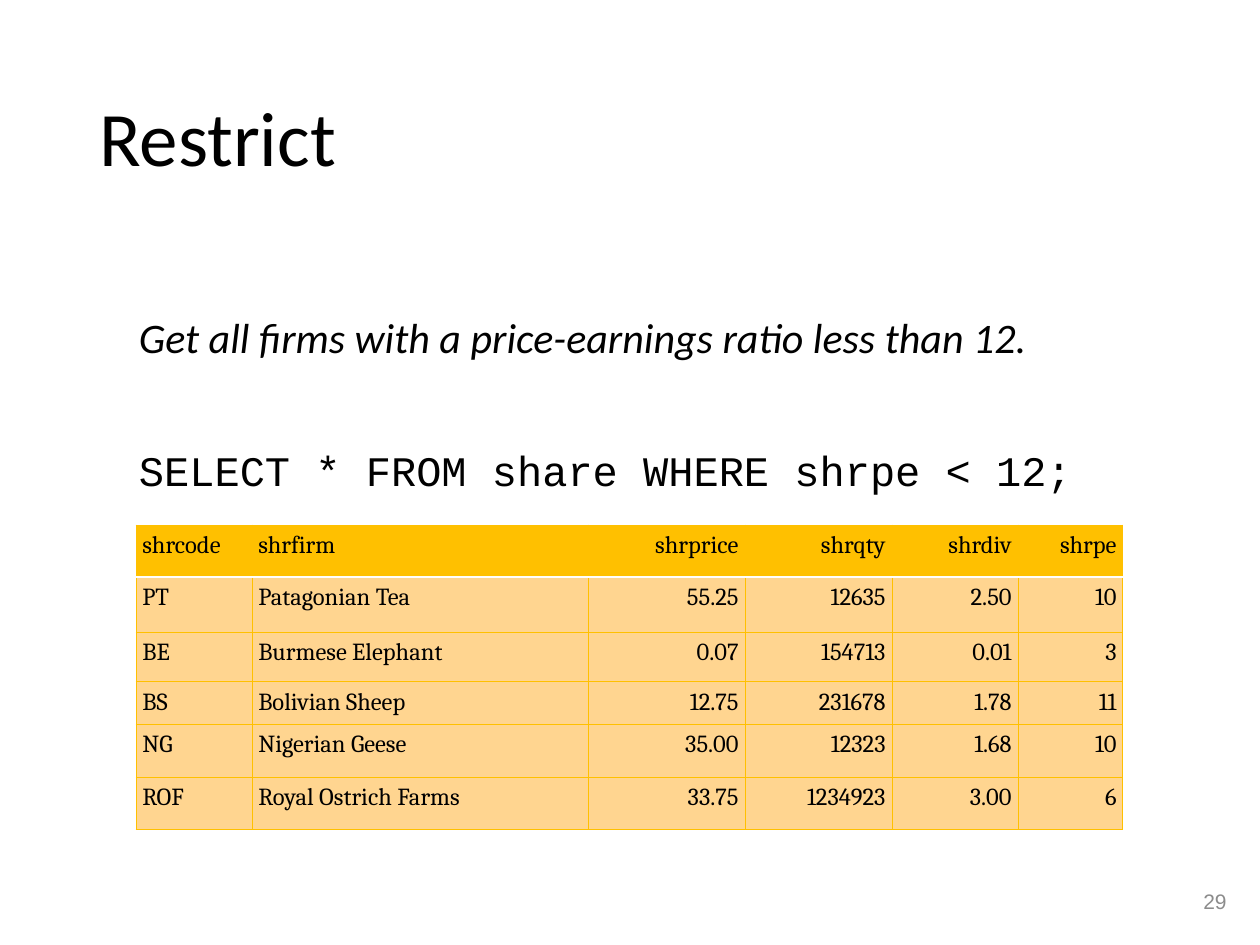
from lxml import etree
from pptx import Presentation
from pptx.dml.color import RGBColor
from pptx.enum.text import MSO_ANCHOR, PP_ALIGN
from pptx.oxml.ns import qn
from pptx.util import Emu, Pt

LEFT, RIGHT = PP_ALIGN.LEFT, PP_ALIGN.RIGHT
TOP, MIDDLE = MSO_ANCHOR.TOP, MSO_ANCHOR.MIDDLE

BLACK = RGBColor(0x00, 0x00, 0x00)
GRAY = RGBColor(0x8C, 0x8C, 0x8C)
WHITE = RGBColor(0xFF, 0xFF, 0xFF)
GOLD = RGBColor(0xFF, 0xC0, 0x00)
PALE_GOLD = RGBColor(0xFF, 0xD5, 0x90)

COL_WIDTHS = [116, 336, 157, 147, 126, 105]
ROW_HEIGHTS = [52, 55, 50, 42, 53, 52]
TEXT_COLS = 2  # the columns after these hold numbers
SHARES = [
    ["shrcode", "shrfirm", "shrprice", "shrqty", "shrdiv", "shrpe"],
    ["PT", "Patagonian Tea", "55.25", "12635", "2.50", "10"],
    ["BE", "Burmese Elephant", "0.07", "154713", "0.01", "3"],
    ["BS", "Bolivian Sheep", "12.75", "231678", "1.78", "11"],
    ["NG", "Nigerian Geese", "35.00", "12323", "1.68", "10"],
    ["ROF", "Royal Ostrich Farms", "33.75", "1234923", "3.00", "6"],
]


def px(n):
    return Emu(n * 914400 // 126)


def style(p, font, size, color=BLACK, italic=False, align=LEFT):
    p.alignment = align
    for r in p.runs:
        r.font.name = font
        r.font.size = Pt(size)
        r.font.color.rgb = color
        r.font.italic = italic


def add_text(s, box, text, anchor=TOP):
    tf = s.shapes.add_textbox(*map(px, box)).text_frame
    tf.word_wrap = True
    tf.vertical_anchor = anchor
    tf.text = text
    return tf


def set_borders(cell, **sides):
    """Draw cell edges; each side L, R, T, B is a (colour, points) pair."""
    tcPr = cell._tc.get_or_add_tcPr()
    for i, (side, (color, width)) in enumerate(sides.items()):
        ln = etree.Element(qn("a:ln" + side), w=str(Pt(width)))
        fill = etree.SubElement(ln, qn("a:solidFill"))
        etree.SubElement(fill, qn("a:srgbClr"), val=str(color))
        tcPr.insert(i, ln)


def add_share_table(s, left, top):
    table = s.shapes.add_table(
        len(SHARES), len(COL_WIDTHS), px(left), px(top),
        px(sum(COL_WIDTHS)), px(sum(ROW_HEIGHTS))).table
    for col, width in zip(table.columns, COL_WIDTHS):
        col.width = px(width)
    thin, header_rule = (GOLD, 0.5), (WHITE, 1)
    for i, (row, height) in enumerate(zip(table.rows, ROW_HEIGHTS)):
        row.height = px(height)
        for j, cell in enumerate(row.cells):
            cell.margin_left = cell.margin_right = Pt(3.6)
            cell.margin_top = cell.margin_bottom = Pt(3.6)
            cell.fill.solid()
            cell.fill.fore_color.rgb = PALE_GOLD if i else GOLD
            set_borders(cell, L=thin, R=thin,
                        T=header_rule if i == 1 else thin,
                        B=header_rule if i == 0 else thin)
            p = cell.text_frame.paragraphs[0]
            p.text = SHARES[i][j]
            style(p, "Cambria", 14, align=LEFT if j < TEXT_COLS else RIGHT)


def main():
    prs = Presentation()
    prs.slide_width, prs.slide_height = px(1260), px(945)
    s = prs.slides.add_slide(prs.slide_layouts[6])

    # Title
    p = add_text(s, (87, 50, 1086, 183), "Restrict", MIDDLE).paragraphs[0]
    p.line_spacing = 0.9
    style(p, "Calibri", 44)

    # Question and its query
    tf = add_text(s, (95, 311, 1134, 190),
                  "Get all firms with a price-earnings ratio less than 12.\n"
                  "SELECT * FROM share WHERE shrpe < 12;")
    tf.margin_left = px(44)
    question, query = tf.paragraphs
    question.line_spacing = query.line_spacing = 0.9
    query.space_before = Pt(50)
    style(question, "Calibri", 24, italic=True)
    style(query, "Courier New", 24)

    # Query result
    add_share_table(s, 136, 525)

    # Page number
    tf = add_text(s, (955, 876, 284, 50), "29", MIDDLE)
    style(tf.paragraphs[0], "Arial", 12, GRAY, align=RIGHT)

    prs.save("out.pptx")


if __name__ == "__main__":
    main()
